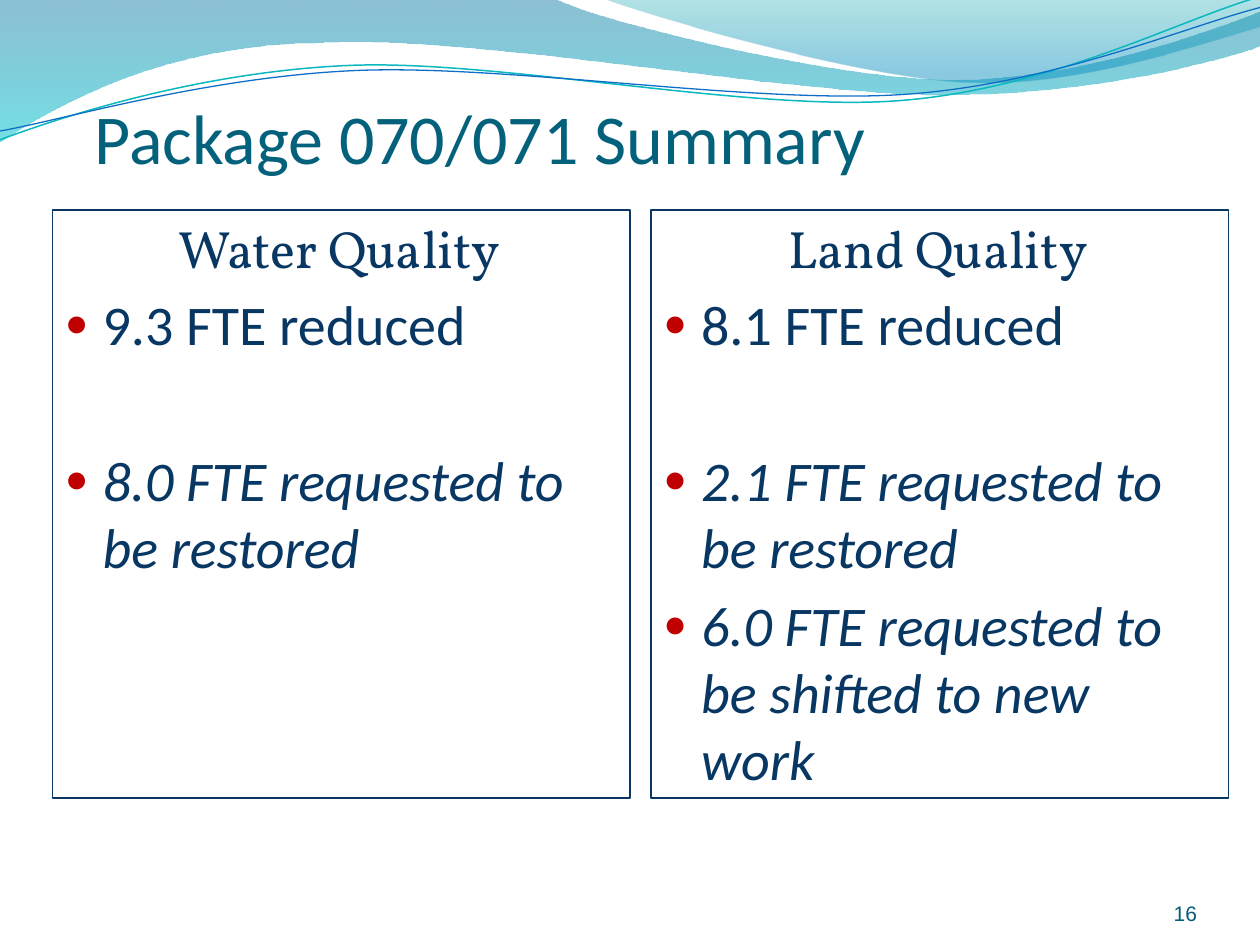
from lxml import etree
from pptx import Presentation
from pptx.dml.color import RGBColor
from pptx.enum.shapes import MSO_SHAPE
from pptx.enum.text import MSO_ANCHOR, PP_ALIGN
from pptx.oxml.ns import qn
from pptx.util import Pt

RECTANGLE = MSO_SHAPE.RECTANGLE
TOP, BOTTOM = MSO_ANCHOR.TOP, MSO_ANCHOR.BOTTOM
LEFT, CENTER, RIGHT = PP_ALIGN.LEFT, PP_ALIGN.CENTER, PP_ALIGN.RIGHT
COLORS = {
    "navy": "083763", "title": "04617B", "number": "045D75", "bullet": "C00000",
    "wave_blue": "0074A1", "wave_cyan": "00C6CF", "crest_teal": "00A1A9",
    "crest_blue": "008BBF", "line_teal": "0AB8BF", "line_blue": "0F6FC6",
}


def draw_curve(page, segments, closed):
    points = [(Pt(72 * x), Pt(72 * y)) for segment in segments
              for x, y in zip(segment[::2], segment[1::2])]
    builder = page.shapes.build_freeform(*points[0])
    builder.add_line_segments(points[1:], close=closed)
    shape = builder.convert_to_shape()
    shape.shadow.inherit = False
    steps = iter(shape._element.spPr.findall(".//" + qn("a:lnTo")))
    for segment in segments[1:]:
        step = next(steps)
        if len(segment) == 6:
            curve = etree.Element(qn("a:cubicBezTo"))
            step.addprevious(curve)
            for corner in (step, next(steps), next(steps)):
                curve.append(corner[0])
                corner.getparent().remove(corner)
    return shape


def style_text(para, size, font, color, align=LEFT, italic=False):
    para.alignment = align
    for span in para.runs:
        span.font.size = Pt(size)
        span.font.name = font
        span.font.italic = italic
        span.font.color.rgb = RGBColor.from_string(COLORS[color])


deck = Presentation()
deck.slide_width, deck.slide_height = Pt(720), Pt(540)
page = deck.slides.add_slide(deck.slide_layouts[6])

waves = [
    ([(0, -0.01), (4.4, -0.01), (4.76, 0.17, 6.64, 0.63, 7.58, 0.63),
      (8.53, 0.63, 9.58, 0.26, 10, 0.09), (10.01, 0.36),
      (9.83, 0.44, 8.7, 0.76, 7.46, 0.75), (6.22, 0.75, 3.82, 0.28, 2.57, 0.34),
      (1.29, 0.35, 0.46, 0.83, -0.01, 1.13)],
     [(0, "wave_blue", 45), (1, "wave_cyan", 55)]),
    ([(4.79, -0.01), (5.09, 0.11, 6.82, 0.62, 7.69, 0.65),
      (8.56, 0.69, 9.61, 0.32, 10, 0.21), (10, 0)],
     [(0, "crest_teal", 30), (0.8, "crest_blue", 45)]),
]
for segments, stops in waves:
    wave = draw_curve(page, segments, True)
    wave.line.fill.background()
    wave.fill.gradient()
    wave.fill.gradient_angle = 270
    for stop, (position, color, opacity) in zip(wave.fill.gradient_stops, stops):
        stop.position = position
        stop.color.rgb = RGBColor.from_string(COLORS[color])
    tints = wave._element.spPr.findall(".//" + qn("a:srgbClr"))
    for tint, (position, color, opacity) in zip(tints, stops):
        etree.SubElement(tint, qn("a:alpha"), val=str(opacity * 1000))

ripples = [
    ("line_teal", 0.85, [(0, 1.11), (0.48, 0.93, 1.58, 0.57, 2.77, 0.52),
                         (3.95, 0.47, 5.93, 0.89, 7.13, 0.8),
                         (8.33, 0.71, 9.38, 0.15, 9.98, -0.02)]),
    ("line_blue", 0.75, [(0, 1.04), (0.47, 0.96, 1.64, 0.61, 2.83, 0.56),
                         (4.03, 0.51, 5.97, 0.83, 7.17, 0.75),
                         (8.36, 0.67, 9.41, 0.21, 10, 0.06)]),
]
for color, width, segments in ripples:
    ripple = draw_curve(page, segments, False)
    ripple.fill.background()
    ripple.line.color.rgb = RGBColor.from_string(COLORS[color])
    ripple.line.width = Pt(width)

labels = [
    ("Package 070/071 Summary", (54, 48, 648, 54), 3.6, 40, "Calibri", "title", LEFT),
    ("16", (624, 500.4, 60, 28.8), 0, 12, "Arial", "number", RIGHT),
]
for text, place, inset, size, font, color, align in labels:
    box = page.shapes.add_textbox(*map(Pt, place))
    frame = box.text_frame
    frame.word_wrap = True
    frame.vertical_anchor = BOTTOM
    frame.margin_left = frame.margin_right = frame.margin_bottom = 0
    frame.margin_top = Pt(inset)
    frame.text = text
    style_text(frame.paragraphs[0], size, font, color, align)

panels = [
    (30, ["Water Quality", "9.3 FTE reduced", "8.0 FTE requested to be restored"]),
    (372, ["Land Quality", "8.1 FTE reduced", "2.1 FTE requested to be restored",
           "6.0 FTE requested to be shifted to new work"]),
]
for left, lines in panels:
    panel = page.shapes.add_shape(RECTANGLE, Pt(left), Pt(120), Pt(330), Pt(336))
    panel.shadow.inherit = False
    panel.fill.background()
    panel.line.color.rgb = RGBColor.from_string(COLORS["navy"])
    panel.line.width = Pt(0.75)
    frame = panel.text_frame
    frame.word_wrap = True
    frame.vertical_anchor = TOP
    frame.margin_right = Pt(9)
    frame.text = "\n".join(lines)
    for index, para in enumerate(frame.paragraphs):
        para.space_after = Pt(6)
        properties = para._p.get_or_add_pPr()
        properties.set("marL", str(Pt(21.6)))
        properties.set("indent", str(-Pt(21.6)))
        if index == 0:
            style_text(para, 30, "Vollkorn", "navy", CENTER)
            continue
        style_text(para, 32, "Calibri", "navy", LEFT, index > 1)
        if index == 2:
            para.space_before = Pt(44.5)
        tint = etree.SubElement(properties, qn("a:buClr"))
        etree.SubElement(tint, qn("a:srgbClr"), val=COLORS["bullet"])
        etree.SubElement(properties, qn("a:buSzPct"), val="70000")
        etree.SubElement(properties, qn("a:buFont"), typeface="Arial")
        etree.SubElement(properties, qn("a:buChar"), char="●")

deck.save("out.pptx")
